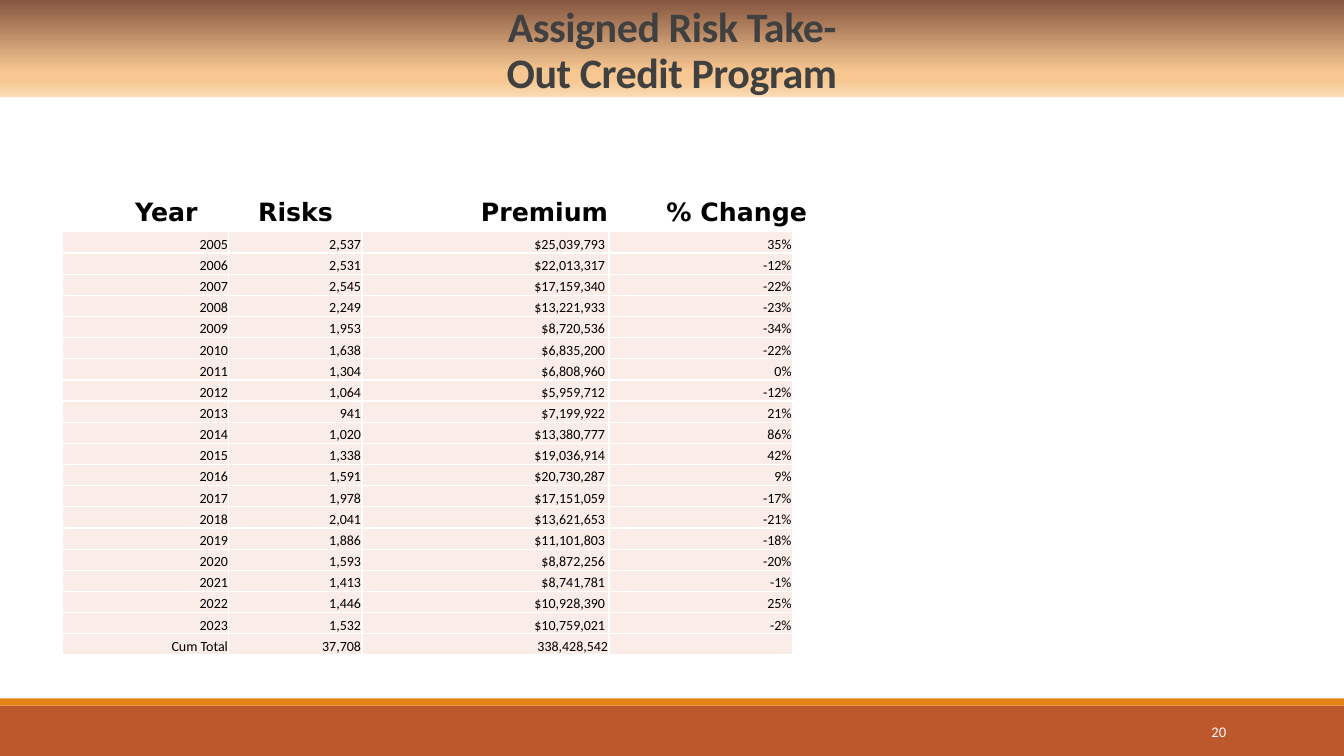
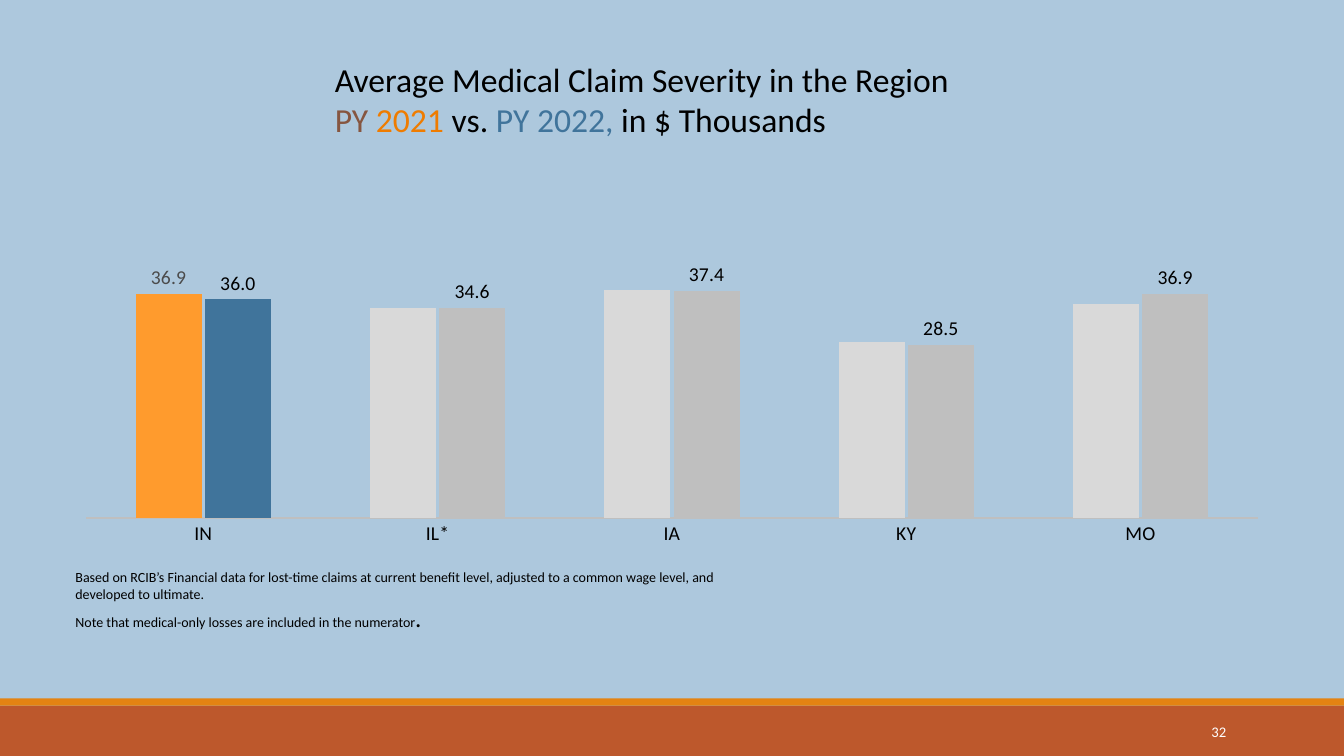
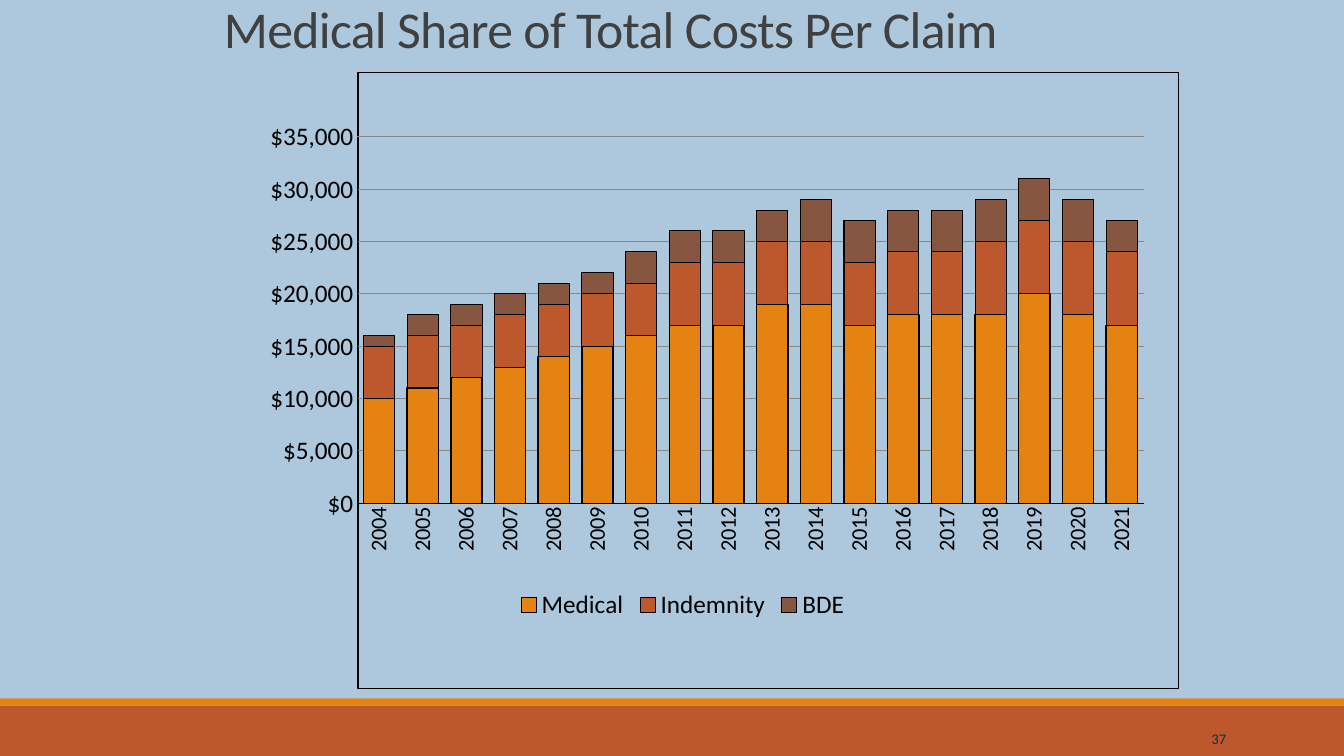
from lxml.etree import SubElement
from pptx import Presentation
from pptx.chart.data import CategoryChartData
from pptx.dml.color import RGBColor
from pptx.enum.chart import (XL_CHART_TYPE, XL_LABEL_POSITION, XL_LEGEND_POSITION,
                             XL_TICK_LABEL_POSITION, XL_TICK_MARK)
from pptx.enum.shapes import MSO_SHAPE
from pptx.enum.text import MSO_ANCHOR, MSO_AUTO_SIZE, PP_ALIGN
from pptx.oxml import parse_xml
from pptx.oxml.ns import nsdecls, qn
from pptx.util import Inches, Pt

# Shared look
BLACK, WHITE, GREY = "000000", "FFFFFF", "404040"
ORANGE, RUST, BROWN = "E48312", "BD582C", "865640"
BLUE, SKY, NAVY = "40749B", "ADC8DD", "0A304A"
BODY_FONT, HEADER_FONT = "Calibri", "DejaVu Sans"
BANDS = [(7, 0.5, RUST), (6.93, 0.07, ORANGE)]  # top, height, colour

# Take-out credit slide
CREDIT_TITLE = "Assigned Risk Take-Out Credit Program"
TITLE_GRADIENT = [(0, BROWN), (74, "F6C791"), (83, "F6C791"), (100, "F9DAB6")]
CREDIT_HEADERS = [("Year", 1.34), ("Risks", 2.56), ("Premium", 4.77), ("% Change", 6.61)]
CREDIT_WIDTHS = [1.65, 1.32, 2.45, 1.82]
CREDIT_ROW_HEIGHT = 0.21
CREDIT_ROWS = [
    ("2005", "2,537", "$25,039,793", "35%"),
    ("2006", "2,531", "$22,013,317", "-12%"),
    ("2007", "2,545", "$17,159,340", "-22%"),
    ("2008", "2,249", "$13,221,933", "-23%"),
    ("2009", "1,953", "$8,720,536", "-34%"),
    ("2010", "1,638", "$6,835,200", "-22%"),
    ("2011", "1,304", "$6,808,960", "0%"),
    ("2012", "1,064", "$5,959,712", "-12%"),
    ("2013", "941", "$7,199,922", "21%"),
    ("2014", "1,020", "$13,380,777", "86%"),
    ("2015", "1,338", "$19,036,914", "42%"),
    ("2016", "1,591", "$20,730,287", "9%"),
    ("2017", "1,978", "$17,151,059", "-17%"),
    ("2018", "2,041", "$13,621,653", "-21%"),
    ("2019", "1,886", "$11,101,803", "-18%"),
    ("2020", "1,593", "$8,872,256", "-20%"),
    ("2021", "1,413", "$8,741,781", "-1%"),
    ("2022", "1,446", "$10,928,390", "25%"),
    ("2023", "1,532", "$10,759,021", "-2%"),
    ("Cum Total", "37,708", "338,428,542", ""),
]

# Claim severity slide
SEVERITY_TITLE = [
    [("Average Medical Claim Severity in the Region", BLACK)],
    [("PY ", BROWN), ("2021 ", "EF7C00"), ("vs. ", BLACK), ("PY 2022, ", BLUE),
     ("in $ Thousands", BLACK)],
]
SEVERITY_NOTES = [
    [("Based on RCIB’s Financial data for lost-time claims at current benefit level, "
      "adjusted to a common wage level, and developed to ultimate.", 10)],
    [("Note that medical-only losses are included in the numerator", 10), (".", 18)],
]
STATES = ["IN", "IL*", "IA", "KY", "MO"]
SEVERITY_SERIES = [  # name, values, first state's colour, other states' colour
    ("Series 1", [36.9, 34.6, 37.5, 28.9, 35.2], "FF9B2D", "D9D9D9"),
    ("Series 2", [36, 34.6, 37.4, 28.5, 36.9], BLUE, "BFBFBF"),
]

# Medical share slide
SHARE_TITLE = "Medical Share of Total Costs Per Claim"
SHARE_YEARS = [str(year) for year in range(2004, 2022)]
SHARE_SERIES = [  # name, values in thousands, colour, outline width
    ("Medical", [10, 11, 12, 13, 14, 15, 16, 17, 17, 19, 19, 17, 18, 18, 18, 20, 18, 17],
     ORANGE, 1),
    ("Indemnity", [5, 5, 5, 5, 5, 5, 5, 6, 6, 6, 6, 6, 6, 6, 7, 7, 7, 7], RUST, 0.75),
    ("BDE", [1, 2, 2, 2, 2, 2, 3, 3, 3, 3, 4, 4, 4, 4, 4, 4, 4, 3], BROWN, 0.75),
]


def rgb(hex_code):
    return RGBColor.from_string(hex_code)


def fill_with(target, color):
    target.fill.solid()
    target.fill.fore_color.rgb = rgb(color)


def draw_line(line, color, width):
    line.color.rgb = rgb(color)
    line.width = Pt(width)


def style_font(font, size, color, bold=False, name=BODY_FONT):
    font.name, font.size, font.bold = name, Pt(size), bold
    font.color.rgb = rgb(color)


def add_span(para, text, size, color, bold=False, name=BODY_FONT, spacing=0):
    span = para.add_run()
    span.text = text
    style_font(span.font, size, color, bold, name)
    if spacing:
        span.font._element.set("spc", str(int(spacing * 100)))


def place(shape, left, top, width, height):
    shape.left, shape.top = Inches(left), Inches(top)
    shape.width, shape.height = Inches(width), Inches(height)


def add_box(page, left, top, width, height):
    box = page.shapes.add_textbox(*map(Inches, (left, top, width, height)))
    box.text_frame.word_wrap = True
    return box


def place_title(page, at, align, anchor):
    title = page.shapes.title
    place(title, *at)
    frame = title.text_frame
    frame.word_wrap, frame.auto_size = True, MSO_AUTO_SIZE.NONE
    frame.vertical_anchor = anchor
    frame.paragraphs[0].alignment = align
    return title


def add_page(deck, number, background, number_color=WHITE, anchor=MSO_ANCHOR.MIDDLE):
    page = deck.slides.add_slide(deck.slide_layouts.get_by_name("Title Only"))
    fill_with(page.background, background)
    frame = add_box(page, 10.83, 7.06, 1.43, 0.4).text_frame
    frame.vertical_anchor = anchor
    para = frame.paragraphs[0]
    para.alignment = PP_ALIGN.RIGHT
    add_span(para, str(number), 10.5, number_color)
    return page


def add_bands(deck, page):
    """Draw the footer bands and move them to the master, behind everything."""
    master_tree = deck.slide_master.shapes.element
    for index, (top, height, color) in enumerate(BANDS):
        band = page.shapes.add_shape(MSO_SHAPE.RECTANGLE, 0, Inches(top),
                                     deck.slide_width, Inches(height))
        band.shadow.inherit = False
        fill_with(band, color)
        band.line.fill.background()
        master_tree.insert(2 + index, band.element)


def add_chart(page, kind, at, categories, series, number_format, plot_box):
    data = CategoryChartData(number_format=number_format)
    data.categories = categories
    for name, values in series:
        data.add_series(name, values)
    chart = page.shapes.add_chart(kind, *map(Inches, at), data).chart
    chart.has_title = chart.has_legend = False
    chart.plots[0].vary_by_categories = False
    # Fixed inner plot area, as fractions of the chart
    area = chart._chartSpace.chart.plotArea
    for old in area.findall(qn("c:layout")):
        area.remove(old)
    layout = parse_xml(f"<c:layout {nsdecls('c')}><c:manualLayout/></c:layout>")
    parts = [("layoutTarget", "inner"), ("xMode", "edge"), ("yMode", "edge"),
             *zip("xywh", plot_box)]
    for tag, value in parts:
        SubElement(layout[0], qn(f"c:{tag}")).set("val", str(value))
    area.insert(0, layout)
    for axis in (chart.category_axis, chart.value_axis):
        axis.major_tick_mark = axis.minor_tick_mark = XL_TICK_MARK.NONE
    return chart


def set_scale(axis, maximum, step):
    axis.minimum_scale, axis.maximum_scale, axis.major_unit = 0, maximum, step


def fill_cell(cell, text):
    fill_with(cell, "FAEDE7")
    cell.vertical_anchor = MSO_ANCHOR.BOTTOM
    cell.margin_left = cell.margin_top = Inches(0.01)
    cell.margin_right = Inches(0.04 if text.startswith("$") else 0.01)
    cell.margin_bottom = 0
    para = cell.text_frame.paragraphs[0]
    para.alignment = PP_ALIGN.RIGHT
    if text:
        add_span(para, text, 10, BLACK)
    else:
        para._p.get_or_add_endParaRPr().set("sz", "1000")
    properties = cell._tc.get_or_add_tcPr()
    for index, side in enumerate(("lnL", "lnR", "lnT", "lnB")):
        properties.insert(index, parse_xml(
            f'<a:{side} {nsdecls("a")} w="12700"><a:solidFill>'
            f'<a:srgbClr val="{WHITE}"/></a:solidFill></a:{side}>'))


def build_credit_page(deck):
    page = add_page(deck, 20, WHITE)
    add_bands(deck, page)

    # Title on a gradient band
    title = place_title(page, (0, 0, 13.33, 0.96), PP_ALIGN.CENTER, MSO_ANCHOR.BOTTOM)
    title.fill.gradient()
    title.fill.gradient_angle = 270
    stops = title.element.spPr.find(".//" + qn("a:gsLst"))
    for old in list(stops):
        stops.remove(old)
    for percent, color in TITLE_GRADIENT:
        stop = SubElement(stops, qn("a:gs"), pos=str(percent * 1000))
        SubElement(stop, qn("a:srgbClr"), val=color)
    frame = title.text_frame
    frame.margin_left = frame.margin_right = Inches(4.82)
    frame.margin_top, frame.margin_bottom = Inches(0.07), 0
    para = frame.paragraphs[0]
    para.line_spacing = Pt(32.4)
    add_span(para, CREDIT_TITLE, 30, GREY, bold=True, spacing=-0.3)

    # Column headings on tab stops
    first_left = CREDIT_HEADERS[0][1]
    header = add_box(page, first_left, 1.9, 7.72, 0.4)
    header.text_frame.margin_left = 0
    para = header.text_frame.paragraphs[0]
    tabs = SubElement(para._p.get_or_add_pPr(), qn("a:tabLst"))
    for _, left in CREDIT_HEADERS[1:]:
        SubElement(tabs, qn("a:tab"), pos=str(Inches(left - first_left)), algn="l")
    add_span(para, "\t".join(name for name, _ in CREDIT_HEADERS), 18, BLACK, True, HEADER_FONT)

    # Table
    row_count = len(CREDIT_ROWS)
    table = page.shapes.add_table(
        row_count, len(CREDIT_WIDTHS), Inches(0.62), Inches(2.3),
        Inches(sum(CREDIT_WIDTHS)), Inches(CREDIT_ROW_HEIGHT * row_count)).table
    table.first_row = table.horz_banding = False
    for column, width in zip(table.columns, CREDIT_WIDTHS):
        column.width = Inches(width)
    for row, texts in zip(table.rows, CREDIT_ROWS):
        row.height = Inches(CREDIT_ROW_HEIGHT)
        for cell, text in zip(row.cells, texts):
            fill_cell(cell, text)


def build_severity_page(deck):
    page = add_page(deck, 32, SKY)
    title = place_title(page, (3.22, 0.53, 8.34, 0.91), PP_ALIGN.LEFT, MSO_ANCHOR.TOP)
    para = title.text_frame.paragraphs[0]
    for index, line in enumerate(SEVERITY_TITLE):
        if index:
            para.add_line_break()
        for text, color in line:
            add_span(para, text, 24, color)

    # Notes
    frame = add_box(page, 0.65, 5.59, 6.67, 0.74).text_frame
    for index, note in enumerate(SEVERITY_NOTES):
        para = frame.add_paragraph() if index else frame.paragraphs[0]
        for text, size in note:
            add_span(para, text, size, BLACK)

    # Chart
    chart = add_chart(page, XL_CHART_TYPE.COLUMN_CLUSTERED, (0.65, 1.07, 12.03, 5.01), STATES,
                      [entry[:2] for entry in SEVERITY_SERIES], "0.0",
                      (0.017, 0.091, 0.966, 0.721))
    style_font(chart.font, 14, BLACK)
    plot = chart.plots[0]
    plot.gap_width, plot.overlap = 150, -5
    draw_line(chart.category_axis.format.line, "BFBFBF", 1)
    values = chart.value_axis
    set_scale(values, 60, 10)
    values.has_major_gridlines = False
    values.tick_label_position = XL_TICK_LABEL_POSITION.NONE
    values.format.line.fill.background()
    for series, (_, _, first_color, other_color) in zip(plot.series, SEVERITY_SERIES):
        fill_with(series.format, other_color)
        fill_with(series.points[0].format, first_color)
    earlier, later = plot.series
    earlier.data_labels.show_value = False
    label = earlier.points[0].data_label
    style_font(label.font, 14, "4B4B4B")
    label.position = XL_LABEL_POSITION.OUTSIDE_END
    labels = later.data_labels
    labels.show_value = True
    labels.number_format, labels.number_format_is_linked = "0.0", False
    labels.position = XL_LABEL_POSITION.OUTSIDE_END
    style_font(labels.font, 14, BLACK)


def build_share_page(deck):
    page = add_page(deck, 37, SKY, NAVY, MSO_ANCHOR.BOTTOM)
    title = place_title(page, (2.12, -0.04, 11.21, 0.68), PP_ALIGN.LEFT, MSO_ANCHOR.BOTTOM)
    para = title.text_frame.paragraphs[0]
    para.line_spacing = 0.9
    add_span(para, SHARE_TITLE, 36.9, GREY, spacing=-0.5)

    # Frame behind the chart
    border = page.shapes.add_shape(MSO_SHAPE.RECTANGLE,
                                   *map(Inches, (3.55, 0.72, 8.14, 6.11)))
    border.shadow.inherit = False
    border.fill.background()
    draw_line(border.line, BLACK, 1)

    # Chart
    series_data = [(name, [value * 1000 for value in values])
                   for name, values, _, _ in SHARE_SERIES]
    chart = add_chart(page, XL_CHART_TYPE.COLUMN_STACKED, (2.16, 1.15, 9.22, 5.05), SHARE_YEARS,
                      series_data, '"$"#,##0', (0.15, 0.041, 0.846, 0.72))
    style_font(chart.font, 18, BLACK)
    plot = chart.plots[0]
    plot.gap_width, plot.overlap = 40, 100
    for series, (_, _, color, width) in zip(plot.series, SHARE_SERIES):
        fill_with(series.format, color)
        draw_line(series.format.line, BLACK, width)
    years, costs = chart.category_axis, chart.value_axis
    for axis in (years, costs):
        draw_line(axis.format.line, BLACK, 0.75)
    style_font(years.tick_labels.font, 16, BLACK)
    turned = years._element.find(qn("c:txPr")).find(qn("a:bodyPr"))
    turned.set("rot", "-5400000")
    turned.set("vert", "horz")
    set_scale(costs, 35000, 5000)
    costs.tick_labels.number_format = '"$"#,##0'
    costs.tick_labels.number_format_is_linked = False
    draw_line(costs.major_gridlines.format.line, "868686", 0.75)
    chart.has_legend = True
    chart.legend.position = XL_LEGEND_POSITION.BOTTOM
    chart.legend.include_in_layout = False
    style_font(chart.legend.font, 18, BLACK)


def main():
    deck = Presentation()
    deck.slide_width, deck.slide_height = Inches(13.33), Inches(7.5)
    build_credit_page(deck)
    build_severity_page(deck)
    build_share_page(deck)
    deck.save("out.pptx")


if __name__ == "__main__":
    main()
